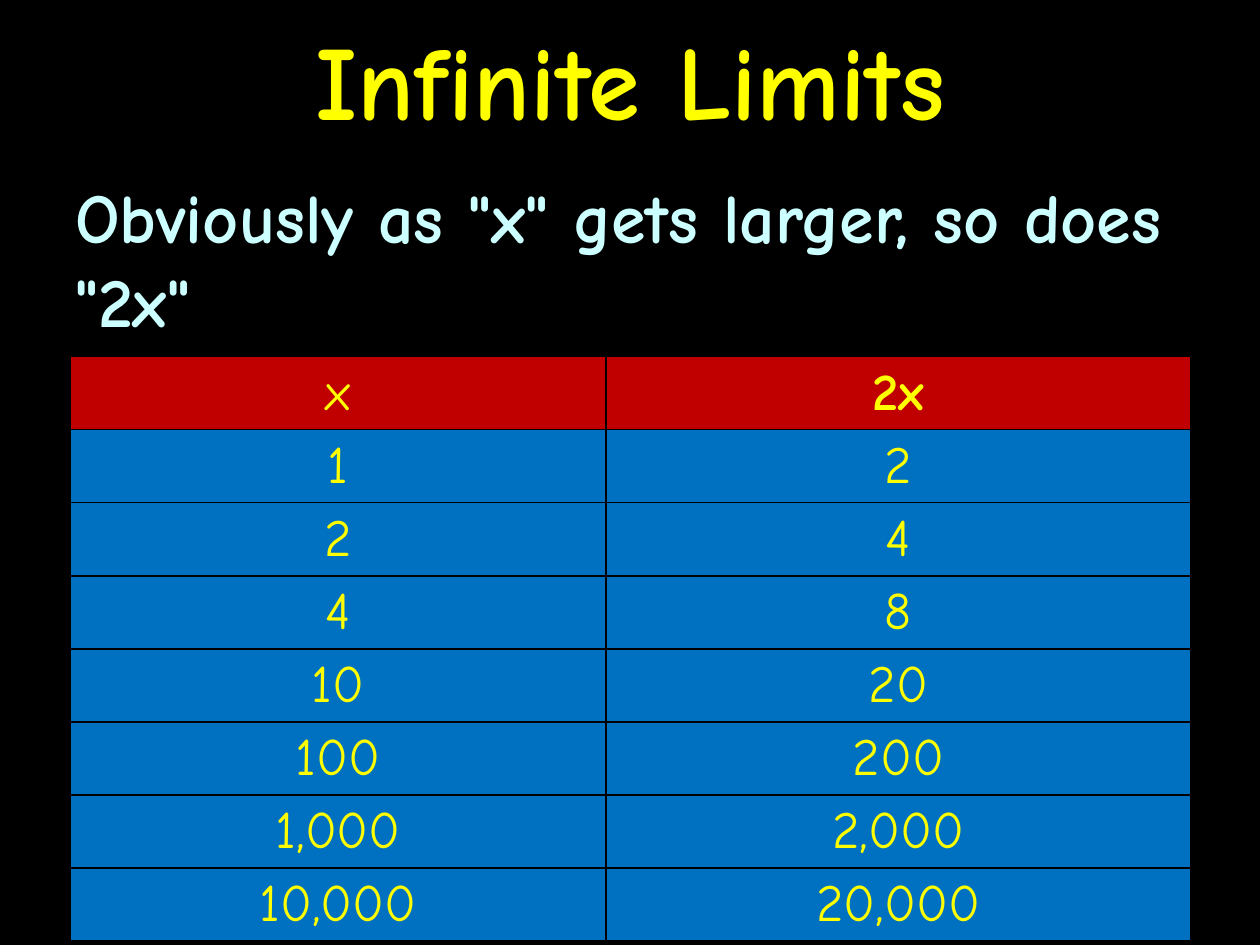
from pptx import Presentation
from pptx.util import Inches, Pt
from pptx.dml.color import RGBColor
from pptx.enum.text import PP_ALIGN, MSO_ANCHOR
from pptx.oxml import parse_xml
from pptx.oxml.ns import nsdecls

BLACK = RGBColor(0x00, 0x00, 0x00)
YELLOW = RGBColor(0xFF, 0xFF, 0x00)
CYAN = RGBColor(0xCC, 0xFF, 0xFF)
RED = RGBColor(0xC0, 0x00, 0x00)
BLUE = RGBColor(0x00, 0x70, 0xC0)
FONT = "Comic Neue"


def write(frame, text, size, color, bold, align):
    par = frame.paragraphs[0]
    par.alignment = align
    run = par.add_run()
    run.text = text
    run.font.name = FONT
    run.font.size = Pt(size)
    run.font.bold = bold
    run.font.color.rgb = color
    return par


def add_border(cell, side, width):
    """Draw a black line on one side (L, R, T or B) of a table cell."""
    line = parse_xml(
        f'<a:ln{side} {nsdecls("a")} w="{Pt(width)}"><a:solidFill>'
        f'<a:srgbClr val="{BLACK}"/></a:solidFill></a:ln{side}>')
    cell._tc.get_or_add_tcPr().append(line)


prs = Presentation()
prs.slide_width, prs.slide_height = Inches(10), Inches(7.5)
slide = prs.slides.add_slide(prs.slide_layouts[6])
slide.background.fill.solid()
slide.background.fill.fore_color.rgb = BLACK

body = slide.shapes.add_textbox(
    Inches(0.5), Inches(1.33), Inches(9), Inches(6.17)).text_frame
body.word_wrap = True
par = write(body, 'Obviously as "x" gets larger, so does "2x"',
            40, CYAN, True, PP_ALIGN.LEFT)
par.space_before = Pt(8)

title = slide.shapes.add_textbox(
    Inches(0), Inches(0), Inches(10), Inches(1.25)).text_frame
title.word_wrap = True
title.vertical_anchor = MSO_ANCHOR.MIDDLE
write(title, "Infinite Limits", 60, YELLOW, True, PP_ALIGN.CENTER)

values = [1, 2, 4, 10, 100, 1000, 10000]
rows = [("x", "2x")] + [(f"{x:,}", f"{2 * x:,}") for x in values]
table = slide.shapes.add_table(
    len(rows), 2, Inches(0.56), Inches(2.83), Inches(8.89), Inches(4.5)).table
table.columns[0].width = Inches(4.25)
table.columns[1].width = Inches(4.64)

for r, row in enumerate(rows):
    for c, text in enumerate(row):
        cell = table.cell(r, c)
        cell.vertical_anchor = MSO_ANCHOR.MIDDLE
        cell.margin_left = cell.margin_right = Inches(0.04)
        cell.margin_top = cell.margin_bottom = Inches(0.04)
        for side in "LRTB":
            add_border(cell, side, 1)
        cell.fill.solid()
        cell.fill.fore_color.rgb = BLUE if r else RED
        write(cell.text_frame, text, 30, YELLOW, text == "2x", PP_ALIGN.CENTER)

prs.save("out.pptx")
